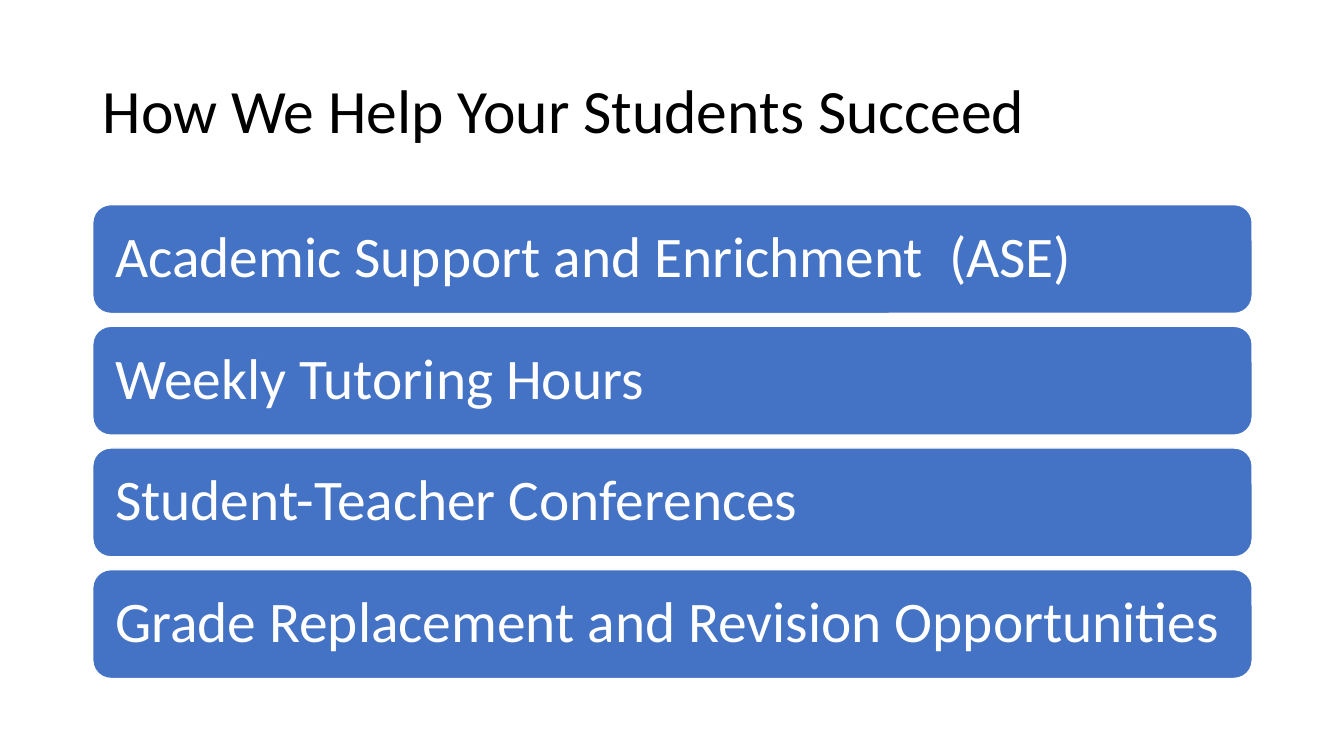
from pptx import Presentation
from pptx.dml.color import RGBColor
from pptx.enum.shapes import MSO_SHAPE as Shape
from pptx.enum.text import MSO_ANCHOR as Anchor, PP_ALIGN as Align
from pptx.util import Inches, Pt

COLORS = {"title": "000000", "bar": "4472C4", "white": "FFFFFF"}
SUPPORTS = [
    "Academic Support and Enrichment  (ASE)",
    "Weekly Tutoring Hours",
    "Student-Teacher Conferences",
    "Grade Replacement and Revision Opportunities",
]
LEFT, WIDTH = 0.92, 11.5
BAR_TOP, BAR_HEIGHT, BAR_STEP = 2.03, 1.08, 1.207


def color(name):
    return RGBColor.from_string(COLORS[name])


def write(box, text, size, color_name):
    frame = box.text_frame
    frame.text = text
    frame.word_wrap = True
    frame.vertical_anchor = Anchor.MIDDLE
    para = frame.paragraphs[0]
    para.alignment = Align.LEFT
    para.line_spacing = 0.9
    span = para.runs[0]
    span.font.name = "Calibri"
    span.font.size = Pt(size)
    span.font.color.rgb = color(color_name)


deck = Presentation()
deck.slide_width, deck.slide_height = Inches(13.33), Inches(7.5)
page = deck.slides.add_slide(deck.slide_layouts[6])

# Title
title = page.shapes.add_textbox(Inches(LEFT), Inches(0.4), Inches(WIDTH), Inches(1.45))
write(title, "How We Help Your Students Succeed", 44, "title")

# One rounded bar per kind of support
for index, support in enumerate(SUPPORTS):
    bar = page.shapes.add_shape(
        Shape.ROUNDED_RECTANGLE,
        Inches(LEFT), Inches(BAR_TOP + index * BAR_STEP),
        Inches(WIDTH), Inches(BAR_HEIGHT),
    )
    bar.shadow.inherit = False
    bar.fill.solid()
    bar.fill.fore_color.rgb = color("bar")
    bar.line.color.rgb = color("white")
    bar.line.width = Pt(1)
    write(bar, support, 41, "white")
    frame = bar.text_frame
    frame.margin_left = frame.margin_right = Inches(0.17)
    frame.margin_top = frame.margin_bottom = Inches(0.17)

deck.save("out.pptx")
